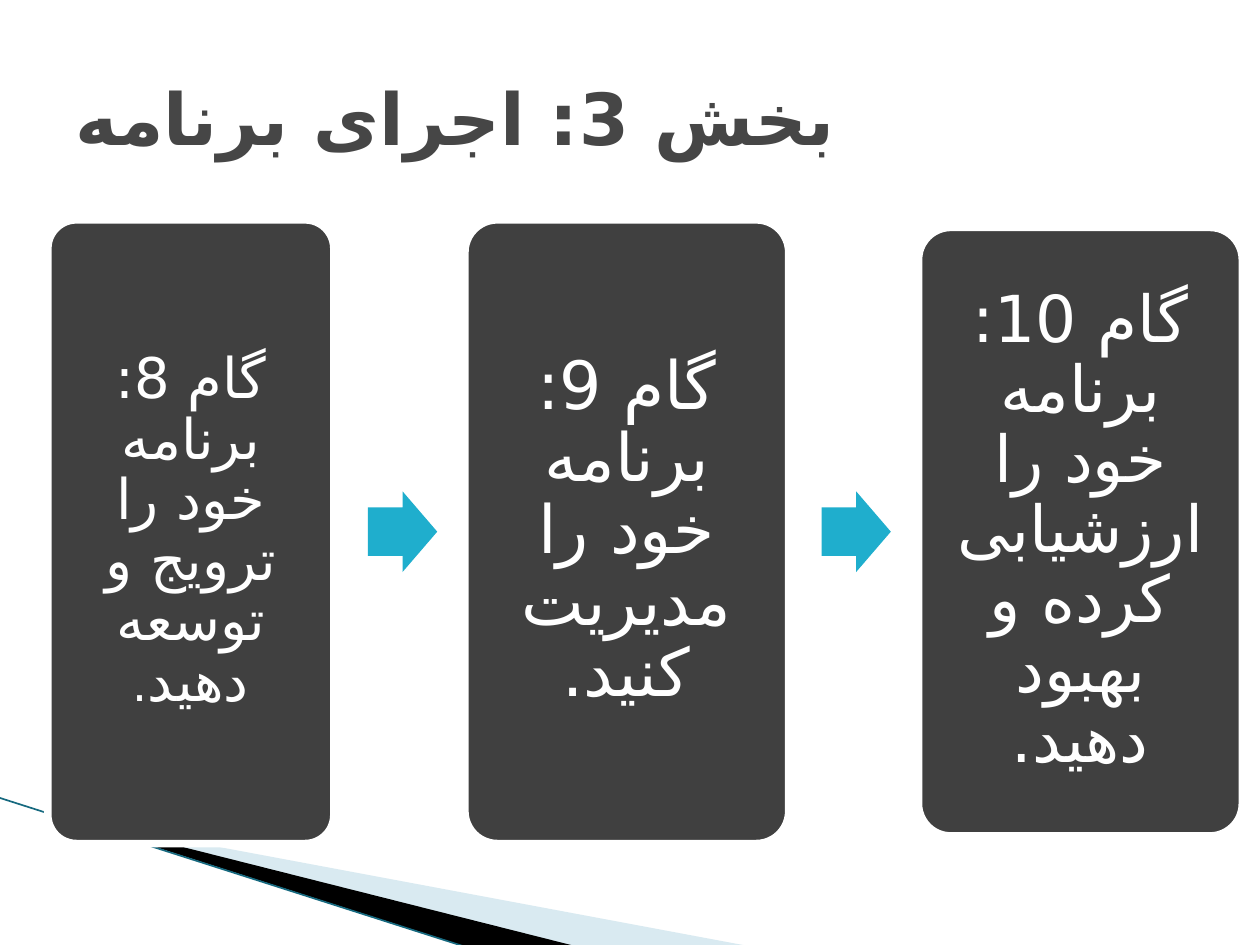
from lxml import etree
from pptx import Presentation
from pptx.dml.color import RGBColor
from pptx.enum.shapes import MSO_CONNECTOR, MSO_SHAPE
from pptx.enum.text import MSO_ANCHOR, PP_ALIGN
from pptx.oxml.ns import qn
from pptx.util import Inches, Pt

TITLE = "بخش 3: اجرای برنامه"
STEPS = [
    {"runs": [("گام 8: برنامه خود را ترويج و توسعه دهيد", 32), (".", 27)],
     "left": 0.38, "width": 2.27, "height": 4.95, "inset": 0.13},
    {"runs": [("گام 9: برنامه خود را مدیریت كنيد.", 38)],
     "left": 3.69, "width": 2.57, "height": 4.95, "inset": 0.16},
    {"runs": [("گام 10: برنامه خود را ارزشیابی کرده و بهبود دهيد.", 37)],
     "left": 7.29, "width": 2.57, "height": 4.83, "inset": 0.15},
]
PALE_BAND = [(55, 650), (55, 651), (456, 751), (595, 751)]
BLACK_BAND = [(53, 649), (457, 751), (372, 752), (54, 650)]
EDGE = (-0.01, 6.33, 3.71, 7.52)

FONT = "DejaVu Sans Mono"
COMPLEX_FONT = "DejaVu Sans"
WHITE = RGBColor(0xFF, 0xFF, 0xFF)
BLACK = RGBColor(0, 0, 0)
CHARCOAL = RGBColor(0x40, 0x40, 0x40)
TITLE_GRAY = RGBColor(0x46, 0x46, 0x46)
ARROW_BLUE = RGBColor(0x1F, 0xAE, 0xCD)
PALE_BLUE = RGBColor(0xA0, 0xCB, 0xDC)
EDGE_TEAL = RGBColor(0x16, 0x69, 0x7F)
ROUNDED = MSO_SHAPE.ROUNDED_RECTANGLE
RIGHT_ARROW = MSO_SHAPE.RIGHT_ARROW
STRAIGHT = MSO_CONNECTOR.STRAIGHT
MIDDLE = MSO_ANCHOR.MIDDLE
LEFT, CENTER = PP_ALIGN.LEFT, PP_ALIGN.CENTER

HUNDREDTH = Inches(0.01)
ROW_MIDDLE = 4.22
ARROW_WIDTH, ARROW_HEIGHT = 0.55, 0.64
ARROW_GAP = 0.22


def fill_shape(shape, color):
    shape.shadow.inherit = False
    shape.fill.solid()
    shape.fill.fore_color.rgb = color
    shape.line.fill.background()


def add_band(slide, points, color):
    builder = slide.shapes.build_freeform(*points[0], scale=HUNDREDTH)
    builder.add_line_segments(points[1:])
    band = builder.convert_to_shape()
    fill_shape(band, color)
    return band


def write_right_to_left(paragraph, runs, color, alignment):
    paragraph.alignment = alignment
    paragraph._p.get_or_add_pPr().set("rtl", "1")
    for text, size in runs:
        run = paragraph.add_run()
        run.text = text
        run.font.size = Pt(size)
        run.font.name = FONT
        run.font.color.rgb = color
        complex_font = etree.SubElement(run._r.get_or_add_rPr(), qn("a:cs"))
        complex_font.set("typeface", COMPLEX_FONT)


def add_background(slide):
    pale = add_band(slide, PALE_BAND, PALE_BLUE)
    color = pale._element.spPr.find(qn("a:solidFill"))[0]
    etree.SubElement(color, qn("a:alpha")).set("val", "40000")
    add_band(slide, BLACK_BAND, BLACK)
    edge = slide.shapes.add_connector(STRAIGHT, *map(Inches, EDGE))
    edge.line.color.rgb = EDGE_TEAL
    edge.line.width = Pt(0.95)
    etree.SubElement(edge._element.spPr, qn("a:effectLst"))


def add_step(slide, step):
    top = ROW_MIDDLE - step["height"] / 2
    box = slide.shapes.add_shape(ROUNDED, *map(Inches, (
        step["left"], top, step["width"], step["height"])))
    box.adjustments[0] = 0.1
    fill_shape(box, CHARCOAL)
    box.line.color.rgb = WHITE
    box.line.width = Pt(4.33)
    frame = box.text_frame
    frame.word_wrap = True
    frame.vertical_anchor = MIDDLE
    inset = Inches(step["inset"])
    frame.margin_left = frame.margin_right = inset
    frame.margin_top = frame.margin_bottom = inset
    paragraph = frame.paragraphs[0]
    paragraph.line_spacing = 0.9
    write_right_to_left(paragraph, step["runs"], WHITE, CENTER)


def add_arrow(slide, next_step):
    arrow = slide.shapes.add_shape(RIGHT_ARROW, *map(Inches, (
        next_step["left"] - ARROW_GAP - ARROW_WIDTH,
        ROW_MIDDLE - ARROW_HEIGHT / 2, ARROW_WIDTH, ARROW_HEIGHT)))
    arrow.adjustments[0] = 0.6
    arrow.adjustments[1] = 0.5
    fill_shape(arrow, ARROW_BLUE)


def add_title(slide):
    title = slide.shapes.title
    title.left, title.top, title.width, title.height = map(
        Inches, (0.5, 0.3, 9, 1.25))
    title.text_frame.vertical_anchor = MIDDLE
    paragraph = title.text_frame.paragraphs[0]
    write_right_to_left(paragraph, [(TITLE, 41)], TITLE_GRAY, LEFT)
    paragraph.runs[0].font.bold = True


def main():
    presentation = Presentation()
    presentation.slide_width = Inches(10)
    presentation.slide_height = Inches(7.5)
    slide = presentation.slides.add_slide(presentation.slide_layouts[5])
    add_background(slide)
    for index, step in enumerate(STEPS):
        if index:
            add_arrow(slide, step)
        add_step(slide, step)
    add_title(slide)
    presentation.save("out.pptx")


if __name__ == "__main__":
    main()
